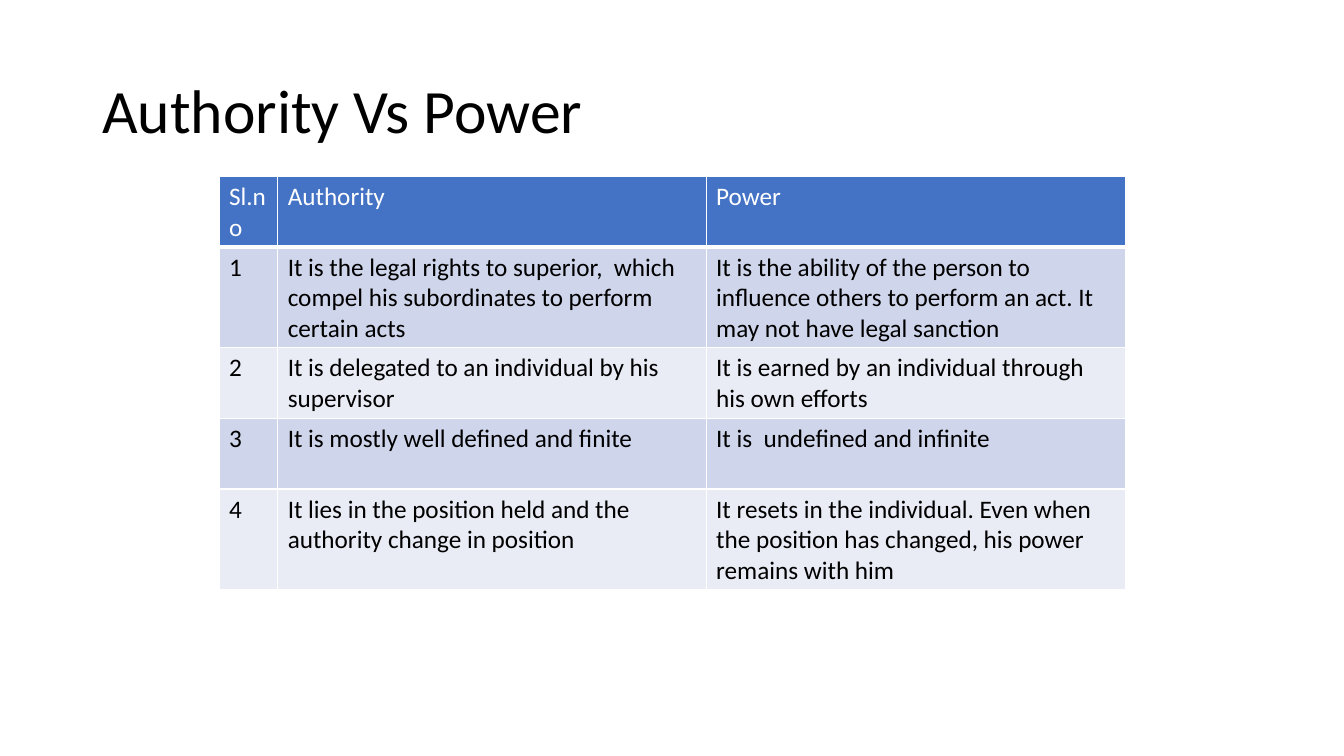
from lxml import etree
from pptx import Presentation
from pptx.dml.color import RGBColor
from pptx.enum import text
from pptx.oxml import ns
from pptx.util import Pt

TITLE = "Authority Vs Power"
HEADER = ("Sl.no", "Authority", "Power")
COMPARISONS = [
    ("It is the legal rights to superior,  which compel his subordinates to perform certain acts",
     "It is the ability of the person to influence others to perform an act. "
     "It may not have legal sanction"),
    ("It is delegated to an individual by his supervisor",
     "It is earned by an individual through his own efforts"),
    ("It is mostly well defined and finite",
     "It is  undefined and infinite"),
    ("It lies in the position held and the authority change in position",
     "It resets in the individual. Even when the position has changed, "
     "his power remains with him"),
]
COLUMN_WIDTHS = (42, 306, 300)
ROW_HEIGHTS = (50.4, 72, 50.4, 50.4, 72)
TABLE_LEFT, TABLE_TOP = 156.4, 126

FONT = "Calibri"
BLACK = RGBColor(0, 0, 0)
WHITE = RGBColor(255, 255, 255)
HEADER_BLUE = RGBColor(0x44, 0x72, 0xC4)
BANDS = (RGBColor(0xE9, 0xEB, 0xF5), RGBColor(0xCF, 0xD5, 0xEA))


def style_font(paragraph, size, color):
    font = paragraph.font
    font.name, font.size, font.bold = FONT, Pt(size), False
    font.color.rgb = color


def add_borders(cell, bottom_width):
    """Draw white cell edges, 1 pt wide except for the bottom one."""
    properties = cell._tc.get_or_add_tcPr()
    edges = (("L", 1), ("R", 1), ("T", 1), ("B", bottom_width))
    for position, (side, width) in enumerate(edges):
        line = etree.Element(ns.qn(f"a:ln{side}"), w=str(Pt(width)))
        fill = etree.SubElement(line, ns.qn("a:solidFill"))
        etree.SubElement(fill, ns.qn("a:srgbClr"), val=str(WHITE))
        properties.insert(position, line)


def add_title(slide):
    frame = slide.shapes.add_textbox(Pt(66), Pt(28.75), Pt(828), Pt(104.4)).text_frame
    frame.word_wrap = True
    frame.vertical_anchor = text.MSO_ANCHOR.MIDDLE
    heading = frame.paragraphs[0]
    heading.text = TITLE
    heading.line_spacing = 0.9
    style_font(heading, 44, BLACK)


def add_comparison(slide):
    rows = [HEADER] + [(str(number), *pair) for number, pair in enumerate(COMPARISONS, 1)]
    table = slide.shapes.add_table(
        len(rows), len(HEADER), Pt(TABLE_LEFT), Pt(TABLE_TOP),
        Pt(sum(COLUMN_WIDTHS)), Pt(sum(ROW_HEIGHTS))).table
    for column, width in zip(table.columns, COLUMN_WIDTHS):
        column.width = Pt(width)
    for r, (row, height) in enumerate(zip(rows, ROW_HEIGHTS)):
        table.rows[r].height = Pt(height)
        is_header = r == 0
        for c, wording in enumerate(row):
            cell = table.cell(r, c)
            cell.text = wording
            cell.fill.solid()
            cell.fill.fore_color.rgb = HEADER_BLUE if is_header else BANDS[r % 2]
            add_borders(cell, 3 if is_header else 1)
            style_font(cell.text_frame.paragraphs[0], 18, WHITE if is_header else BLACK)


def main():
    deck = Presentation()
    deck.slide_width, deck.slide_height = Pt(960), Pt(540)
    slide = deck.slides.add_slide(deck.slide_layouts[6])
    add_title(slide)
    add_comparison(slide)
    deck.save("out.pptx")


if __name__ == "__main__":
    main()
